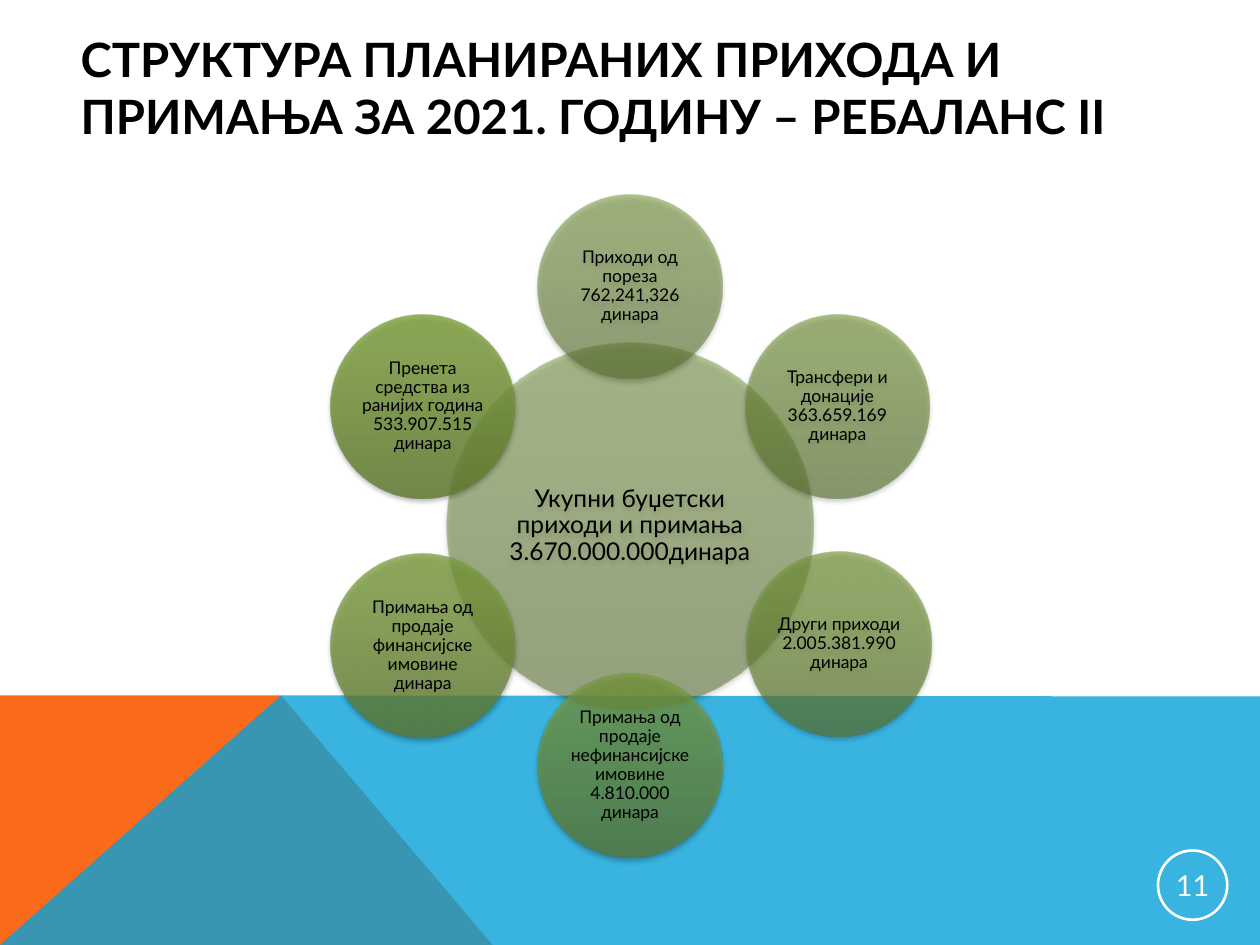
import math
from dataclasses import dataclass

from lxml import etree
from pptx import Presentation
from pptx.dml.color import RGBColor
from pptx.enum.shapes import MSO_SHAPE
from pptx.enum.text import MSO_ANCHOR, MSO_AUTO_SIZE, PP_ALIGN
from pptx.oxml.ns import qn
from pptx.util import Pt

OVAL = MSO_SHAPE.OVAL
MIDDLE = MSO_ANCHOR.MIDDLE
NO_AUTOFIT = MSO_AUTO_SIZE.NONE
LEFT, CENTER = PP_ALIGN.LEFT, PP_ALIGN.CENTER

BLACK = RGBColor(0x00, 0x00, 0x00)
WHITE = RGBColor(0xFF, 0xFF, 0xFF)
ORANGE = RGBColor(0xF9, 0x6A, 0x1B)
BLUE = RGBColor(0x08, 0xA1, 0xD9)
FIRST_GREENS = (RGBColor(0x56, 0x6F, 0x2A), RGBColor(0x70, 0x90, 0x37), RGBColor(0x71, 0x92, 0x35))
LAST_GREENS = (RGBColor(0x60, 0x7B, 0x2F), RGBColor(0x7C, 0x9F, 0x3D), RGBColor(0x7D, 0xA2, 0x3C))
STOP_POSITIONS = (0, 80, 100)

FONT = "Lato"
PAGE_WIDTH, PAGE_HEIGHT = 720, 540
BAND_TOP = 397.4
HUB_X, HUB_Y = 360, 300.6
HUB_SIZE, SATELLITE_SIZE = 209.6, 105.2
RING_RADIUS = 136.8


@dataclass(frozen=True)
class Disc:
    text: str
    x: float
    y: float
    size: float
    font_size: float
    inset: float


@dataclass(frozen=True)
class Satellite:
    text: str
    shift_x: float = 0
    shift_y: float = 0


@dataclass(frozen=True)
class Facet:
    points: tuple[tuple[float, float], ...]
    color: RGBColor
    opacity: int


SATELLITES = (
    Satellite("Приходи од пореза 762,241,326 динара"),
    Satellite("Трансфери и донације 363.659.169 динара"),
    Satellite("Други приходи 2.005.381.990 динара", 1, -1),
    Satellite("Примања од продаје нефинансијске имовине 4.810.000 динара"),
    Satellite("Примања од продаје финансијске имовине динара"),
    Satellite("Пренета средства из ранијих година 533.907.515 динара"),
)

FACETS = (
    Facet(((0, PAGE_HEIGHT), (0, BAND_TOP), (160.6, BAND_TOP), (281.5, PAGE_HEIGHT)), ORANGE, 100),
    Facet(
        ((0, PAGE_HEIGHT), (160.6, BAND_TOP), (PAGE_WIDTH, 398), (PAGE_WIDTH, PAGE_HEIGHT)),
        BLUE,
        80,
    ),
)


def set_values(target, values: dict) -> None:
    for name, value in values.items():
        setattr(target, name, value)


def write_text(shape, text: str, size: float, color: RGBColor, frame_format: dict,
               paragraph_format: dict, bold: bool = False) -> None:
    frame = shape.text_frame
    set_values(frame, {"word_wrap": True, "auto_size": NO_AUTOFIT, "vertical_anchor": MIDDLE})
    set_values(frame, frame_format)
    para = frame.paragraphs[0]
    set_values(para, paragraph_format)
    span = para.add_run()
    span.text = text
    set_values(span.font, {"name": FONT, "size": Pt(size), "bold": bold})
    span.font.color.rgb = color


def margins(inset: float) -> dict:
    return {f"margin_{side}": Pt(inset) for side in ("left", "top", "right", "bottom")}


def add_color(parent, color: RGBColor, opacity: int) -> None:
    node = etree.SubElement(parent, qn("a:srgbClr"), val=str(color))
    etree.SubElement(node, qn("a:alpha"), val=str(opacity * 1000))


def blend(start: RGBColor, end: RGBColor, share: float) -> RGBColor:
    return RGBColor(*(round(a + (b - a) * share) for a, b in zip(start, end)))


def fill_gradient(shape, colors: list[RGBColor], opacity: int) -> None:
    shape.fill.gradient()
    shape.fill.gradient_angle = 90
    stops = shape.element.spPr.find(qn("a:gradFill")).find(qn("a:gsLst"))
    stops.clear()
    for position, color in zip(STOP_POSITIONS, colors):
        stop = etree.SubElement(stops, qn("a:gs"), pos=str(position * 1000))
        add_color(stop, color, opacity)


def add_shadow(shape) -> None:
    shape.shadow.inherit = False
    effects = shape.element.spPr.find(qn("a:effectLst"))
    shadow = etree.SubElement(effects, qn("a:outerShdw"), blurRad=str(Pt(3.1)),
                              dist=str(Pt(1.8)), dir="5400000", rotWithShape="0")
    add_color(shadow, BLACK, 35)


def add_oval(page, disc: Disc, text_color: RGBColor, line_spacing: float):
    corner = (Pt(disc.x - disc.size / 2), Pt(disc.y - disc.size / 2))
    oval = page.shapes.add_shape(OVAL, *corner, Pt(disc.size), Pt(disc.size))
    oval.shadow.inherit = False
    write_text(oval, disc.text, disc.font_size, text_color, margins(disc.inset),
               {"alignment": CENTER, "line_spacing": line_spacing})
    return oval


def add_disc(page, disc: Disc, share: float) -> None:
    oval = add_oval(page, disc, BLACK, 0.9)
    colors = [blend(a, b, share) for a, b in zip(FIRST_GREENS, LAST_GREENS)]
    fill_gradient(oval, colors, round(50 + 30 * share))
    oval.line.fill.background()
    add_shadow(oval)


def add_facet(page, facet: Facet) -> None:
    points = [(Pt(x), Pt(y)) for x, y in facet.points]
    builder = page.shapes.build_freeform(*points[0])
    builder.add_line_segments(points[1:], close=True)
    shape = builder.convert_to_shape()
    shape.shadow.inherit = False
    shape.line.fill.background()
    shape.fill.solid()
    shape.fill.fore_color.rgb = facet.color
    color_node = shape.element.spPr.find(qn("a:solidFill"))[0]
    etree.SubElement(color_node, qn("a:alpha"), val=str(facet.opacity * 1000))


def add_title(page) -> None:
    title = page.shapes.title
    set_values(title, {"left": Pt(38.9), "top": Pt(19.4), "width": Pt(648), "height": Pt(61.2)})
    write_text(title, "СТРУКТУРА ПЛАНИРАНИХ ПРИХОДА И ПРИМАЊА ЗА 2021. ГОДИНУ – РЕБАЛАНС II",
               27, BLACK, {}, {"alignment": LEFT}, bold=True)


def add_page_number(page) -> None:
    badge = add_oval(page, Disc("11", 681.5, 505.8, 39.6, 16.5, 0.7), WHITE, 1.0)
    badge.fill.background()
    badge.line.color.rgb = WHITE
    badge.line.width = Pt(1.5)


def list_discs() -> list[Disc]:
    discs = [Disc("Укупни буџетски приходи и примања 3.670.000.000динара",
                  HUB_X, HUB_Y, HUB_SIZE, 14, 1.4)]
    for index, item in enumerate(SATELLITES):
        angle = math.tau * index / len(SATELLITES)
        x = HUB_X + RING_RADIUS * math.sin(angle) + item.shift_x
        y = HUB_Y - RING_RADIUS * math.cos(angle) + item.shift_y
        discs.append(Disc(item.text, x, y, SATELLITE_SIZE, 10, 0.7))
    return discs


def main() -> None:
    deck = Presentation()
    set_values(deck, {"slide_width": Pt(PAGE_WIDTH), "slide_height": Pt(PAGE_HEIGHT)})
    page = deck.slides.add_slide(deck.slide_layouts[5])
    for facet in FACETS:
        add_facet(page, facet)
    add_title(page)
    add_page_number(page)
    discs = list_discs()
    for index, disc in enumerate(discs):
        add_disc(page, disc, index / (len(discs) - 1))
    deck.save("out.pptx")


if __name__ == "__main__":
    main()
